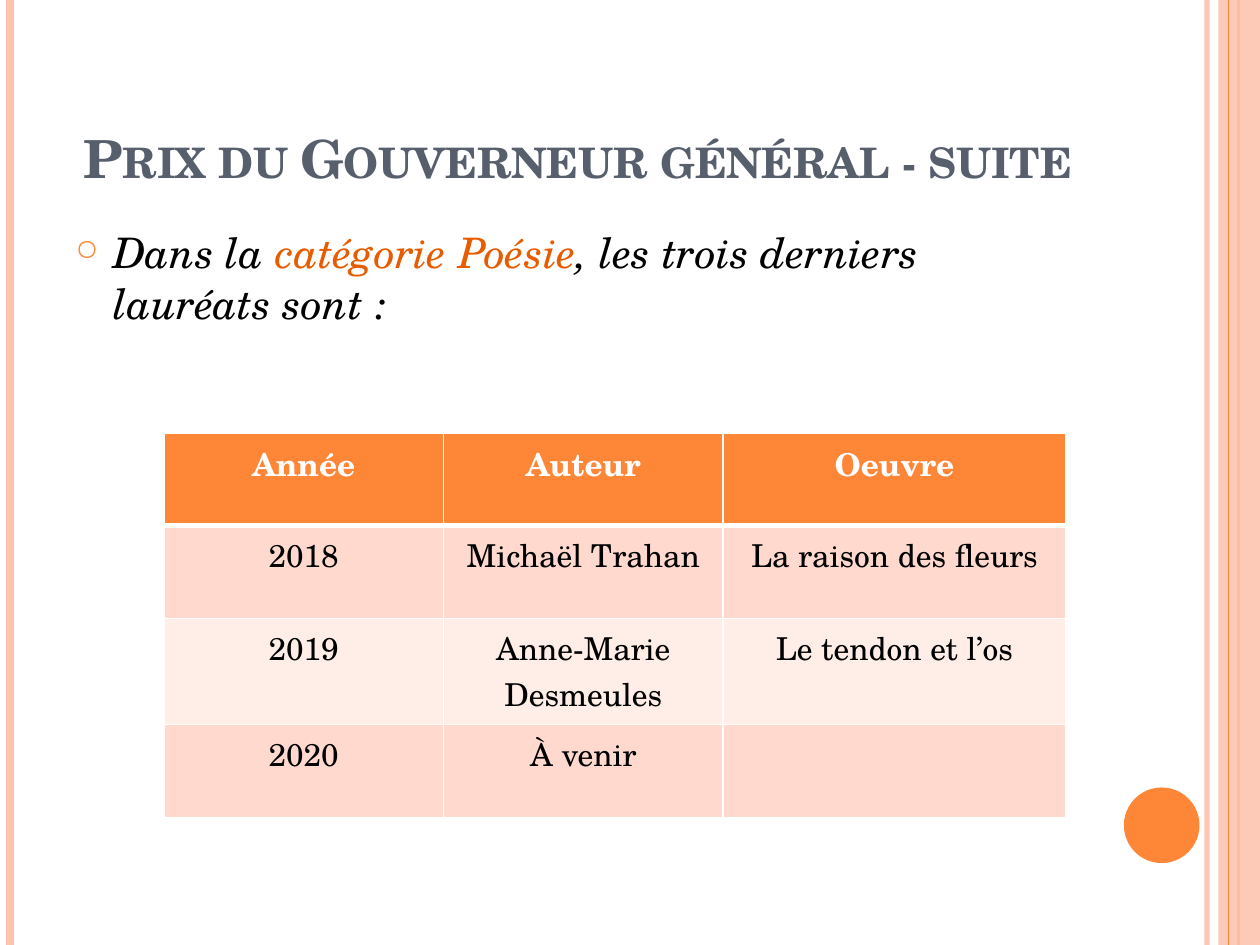
from dataclasses import dataclass

from lxml.etree import SubElement
from pptx import Presentation
from pptx.dml.color import RGBColor
from pptx.enum.shapes import MSO_CONNECTOR, MSO_SHAPE
from pptx.enum.text import MSO_ANCHOR, PP_ALIGN
from pptx.oxml.ns import qn
from pptx.slide import Slide
from pptx.util import Inches, Pt

COLORS = {
    "orange": "FE8637",
    "peach": "FEC3AE",
    "accent": "E75C01",
    "slate": "575F6D",
    "black": "000000",
    "white": "FFFFFF",
    "band_dark": "FFD9CE",
    "band_light": "FFEDE8",
}


def rgb(name):
    return RGBColor.from_string(COLORS[name])


def add_text(paragraph, text, font="TeX Gyre Schola", size=18, color="black",
             bold=False, italic=False, small_caps=False):
    run = paragraph.add_run()
    run.text = text
    run.font.name = font
    run.font.size = Pt(size)
    run.font.color.rgb = rgb(color)
    run.font.bold = bold
    run.font.italic = italic
    if small_caps:
        run.font._element.set("cap", "small")


def set_alpha(fill_parent, percent):
    color = fill_parent.find(".//" + qn("a:srgbClr"))
    SubElement(color, qn("a:alpha")).set("val", str(percent * 1000))


def set_bullet(paragraph, character, color, percent, indent):
    properties = paragraph._p.get_or_add_pPr()
    properties.set("marL", str(Inches(indent)))
    properties.set("indent", str(-Inches(indent)))
    bullet_color = SubElement(properties, qn("a:buClr"))
    SubElement(bullet_color, qn("a:srgbClr")).set("val", COLORS[color])
    SubElement(properties, qn("a:buSzPct")).set("val", str(percent * 1000))
    SubElement(properties, qn("a:buChar")).set("char", character)


def set_borders(cell, color, **widths):
    properties = cell._tc.get_or_add_tcPr()
    for side in "LRTB":
        border = SubElement(properties, qn(f"a:ln{side}"))
        border.set("w", str(Pt(widths.get(side, 1))))
        fill = SubElement(border, qn("a:solidFill"))
        SubElement(fill, qn("a:srgbClr")).set("val", COLORS[color])


@dataclass
class SlideBuilder:
    """Draws styled elements on the current slide."""

    slide: Slide

    def vertical_line(self, x, color, width, alpha=100):
        line = self.slide.shapes.add_connector(
            MSO_CONNECTOR.STRAIGHT, Inches(x), 0, Inches(x), Inches(7.5))
        line.line.color.rgb = rgb(color)
        line.line.width = Pt(width)
        properties = line._element.spPr
        SubElement(properties, qn("a:effectLst"))
        if alpha < 100:
            set_alpha(properties, alpha)

    def shape(self, kind, left, top, width, height, color, alpha=100):
        shape = self.slide.shapes.add_shape(
            kind, Inches(left), Inches(top), Inches(width), Inches(height))
        shape.shadow.inherit = False
        shape.fill.solid()
        shape.fill.fore_color.rgb = rgb(color)
        shape.line.fill.background()
        if alpha < 100:
            set_alpha(shape._element.spPr, alpha)

    def text_box(self, left, top, width, height, anchor=MSO_ANCHOR.TOP):
        box = self.slide.shapes.add_textbox(
            Inches(left), Inches(top), Inches(width), Inches(height))
        box.text_frame.word_wrap = True
        box.text_frame.vertical_anchor = anchor
        return box.text_frame.paragraphs[0]

    def table(self, left, top, columns, heights, rows):
        table = self.slide.shapes.add_table(
            len(rows), len(columns), Inches(left), Inches(top),
            Inches(sum(columns)), Inches(sum(heights))).table
        for column, width in zip(table.columns, columns):
            column.width = Inches(width)
        for index, (values, height) in enumerate(zip(rows, heights)):
            table.rows[index].height = Inches(height)
            header = index == 0
            band = "band_dark" if index % 2 else "band_light"
            for cell, value in zip(table.rows[index].cells, values):
                set_borders(cell, "white", T=3 if index == 1 else 1,
                            B=3 if header else 1)
                cell.fill.solid()
                cell.fill.fore_color.rgb = rgb("orange" if header else band)
                paragraph = cell.text_frame.paragraphs[0]
                paragraph.alignment = PP_ALIGN.CENTER
                if value:
                    add_text(paragraph, value, bold=header,
                             color="white" if header else "black")


def main():
    presentation = Presentation()
    presentation.slide_width = Inches(10)
    presentation.slide_height = Inches(7.5)
    builder = SlideBuilder(presentation.slides.add_slide(presentation.slide_layouts[6]))

    builder.vertical_line(9.58, "peach", 3, alpha=93)
    builder.vertical_line(0.08, "peach", 4.5)
    builder.vertical_line(9.83, "orange", 1.5)
    builder.shape(MSO_SHAPE.RECTANGLE, 9.67, 0, 0.33, 7.5, "peach", alpha=87)
    builder.vertical_line(9.75, "orange", 0.75)
    builder.shape(MSO_SHAPE.OVAL, 8.92, 6.25, 0.6, 0.6, "orange")

    title = builder.text_box(0.5, 0.3, 8.17, 1.25, MSO_ANCHOR.BOTTOM)
    title.alignment = PP_ALIGN.CENTER
    add_text(title, "Prix du Gouverneur général - suite", size=30,
             color="slate", bold=True, small_caps=True)

    body = builder.text_box(0.5, 1.75, 8.17, 5.33)
    body.space_before = Pt(6)
    set_bullet(body, "○", "orange", 70, 0.3)
    for text, color in (
        ("Dans la ", "black"),
        ("catégorie Poésie", "accent"),
        (", les trois derniers lauréats sont :", "black"),
    ):
        add_text(body, text, size=24, color=color, italic=True)

    builder.table(1.3, 3.44, (2.22, 2.22, 2.72), (0.73, 0.74, 0.84, 0.74), (
        ("Année", "Auteur", "Oeuvre"),
        ("2018", "Michaël Trahan", "La raison des fleurs"),
        ("2019", "Anne-Marie Desmeules", "Le tendon et l’os"),
        ("2020", "À venir", ""),
    ))
    presentation.save("out.pptx")


if __name__ == "__main__":
    main()
